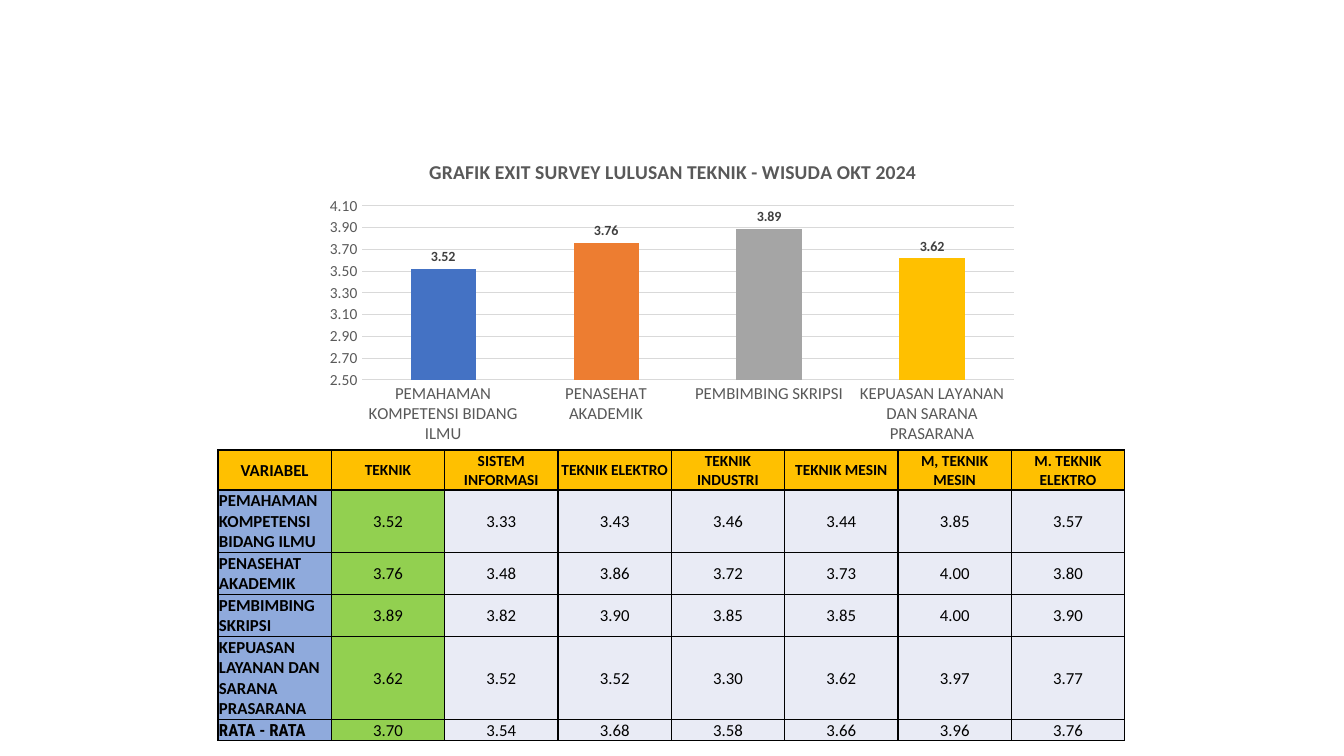
from lxml.etree import SubElement
from pptx import Presentation
from pptx.chart.data import CategoryChartData as ChartData
from pptx.dml.color import RGBColor
from pptx.enum.chart import XL_CHART_TYPE as ChartType
from pptx.enum.chart import XL_LABEL_POSITION as LabelPosition
from pptx.enum.chart import XL_TICK_MARK as TickMark
from pptx.enum.text import MSO_ANCHOR as Anchor
from pptx.enum.text import PP_ALIGN as Align
from pptx.oxml import parse_xml
from pptx.oxml.ns import nsdecls, qn
from pptx.util import Pt

EMU_PER_PX = 914400 / 100.8
BLACK, GRAY, GRID, LABEL = "000000", "595959", "D9D9D9", "404040"
GOLD, GREEN, BLUE, PALE = "FFC000", "92D050", "8FAADC", "E9EBF5"
BAR_COLORS = ["4472C4", "ED7D31", "A5A5A5", GOLD]

TITLE = "GRAFIK EXIT SURVEY LULUSAN TEKNIK - WISUDA OKT 2024"
HEADER = ["VARIABEL", "TEKNIK", "SISTEM INFORMASI", "TEKNIK ELEKTRO",
          "TEKNIK INDUSTRI", "TEKNIK MESIN", "M, TEKNIK MESIN", "M. TEKNIK ELEKTRO"]
SCORES = {
    "PEMAHAMAN KOMPETENSI BIDANG ILMU": [3.52, 3.33, 3.43, 3.46, 3.44, 3.85, 3.57],
    "PENASEHAT AKADEMIK": [3.76, 3.48, 3.86, 3.72, 3.73, 4.00, 3.80],
    "PEMBIMBING SKRIPSI": [3.89, 3.82, 3.90, 3.85, 3.85, 4.00, 3.90],
    "KEPUASAN LAYANAN DAN SARANA PRASARANA": [3.62, 3.52, 3.52, 3.30, 3.62, 3.97, 3.77],
}
AVERAGE = "RATA - RATA"
AVERAGES = [3.70, 3.54, 3.68, 3.58, 3.66, 3.96, 3.76]
ROW_HEIGHTS = [40, 48, 32, 32, 64, 16]


def px(length):
    return round(length * EMU_PER_PX)


def color(value):
    return RGBColor.from_string(value)


def style_font(font, size, fill=BLACK, bold=False, name="Calibri"):
    font.name, font.size, font.bold = name, Pt(size), bold
    font.color.rgb = color(fill)


def write(frame, text, align=Align.CENTER, **style):
    paragraph = frame.paragraphs[0]
    paragraph.alignment = align
    run = paragraph.add_run()
    run.text = text
    style_font(run.font, **style)


class SurveySlide:
    def __init__(self, presentation):
        self.slide = presentation.slides.add_slide(presentation.slide_layouts[6])

    def chart(self, left, top, width, height, title, values, plot):
        data = ChartData(number_format="0.00")
        data.categories = list(values)
        data.add_series("Series 1", list(values.values()))
        frame = self.slide.shapes.add_chart(
            ChartType.COLUMN_CLUSTERED, px(left), px(top), px(width), px(height), data)
        chart = frame.chart
        style_font(chart.font, 10)
        chart.has_legend = False
        chart.has_title = True
        write(chart.chart_title.text_frame, title, size=14, fill=GRAY, bold=True)
        chart.chart_title.include_in_layout = False
        self.axes(chart)
        self.bars(chart.plots[0])
        self.place_plot(chart, plot, (left, top, width, height))

    def axes(self, chart):
        for axis, size in ((chart.category_axis, 12), (chart.value_axis, 11)):
            axis.major_tick_mark = axis.minor_tick_mark = TickMark.NONE
            style_font(axis.tick_labels.font, size, GRAY)
            axis.format.line.fill.background()
        axis = chart.value_axis
        axis.minimum_scale, axis.maximum_scale, axis.major_unit = 2.5, 4.1, 0.2
        axis.tick_labels.number_format = "0.00"
        axis.tick_labels.number_format_is_linked = False
        axis.major_gridlines.format.line.color.rgb = color(GRID)
        axis.major_gridlines.format.line.width = Pt(0.75)

    def bars(self, plot):
        plot.gap_width = 150
        plot.vary_by_categories = False
        series = plot.series[0]
        for index, fill in enumerate(BAR_COLORS):
            point = series.points[index].format
            point.fill.solid()
            point.fill.fore_color.rgb = color(fill)
        labels = series.data_labels
        labels.show_value = True
        labels.number_format = "0.00"
        labels.number_format_is_linked = False
        labels.position = LabelPosition.OUTSIDE_END
        style_font(labels.font, 10, LABEL, bold=True)

    def place_plot(self, chart, plot, area):
        plot_area = chart.plots[0]._element.getparent()
        for old in plot_area.findall(qn("c:layout")):
            plot_area.remove(old)
        layout = parse_xml(f"<c:layout {nsdecls('c')}/>")
        manual = SubElement(layout, qn("c:manualLayout"))
        left, top, width, height = area
        parts = {"layoutTarget": "inner", "xMode": "edge", "yMode": "edge",
                 "x": round((plot[0] - left) / width, 3),
                 "y": round((plot[1] - top) / height, 3),
                 "w": round(plot[2] / width, 3), "h": round(plot[3] / height, 3)}
        for tag, value in parts.items():
            SubElement(manual, qn(f"c:{tag}")).set("val", str(value))
        plot_area.insert(0, layout)

    def cell(self, cell, text, fill, anchor=Anchor.MIDDLE, **style):
        cell.margin_left = cell.margin_right = cell.margin_top = px(1)
        cell.margin_bottom = 0
        cell.vertical_anchor = anchor
        write(cell.text_frame, text, **style)
        properties = cell._tc.get_or_add_tcPr()
        for side in ("lnL", "lnR", "lnT", "lnB"):
            properties.append(parse_xml(
                f'<a:{side} {nsdecls("a")} w="{Pt(1)}"><a:solidFill>'
                f'<a:srgbClr val="{BLACK}"/></a:solidFill></a:{side}>'))
        cell.fill.solid()
        cell.fill.fore_color.rgb = color(fill)

    def table(self, left, top, width, header, rows, heights):
        table = self.slide.shapes.add_table(
            len(rows) + 1, len(header), px(left), px(top), px(width), px(sum(heights))).table
        for row, height in zip(table.rows, heights):
            row.height = px(height)
        for column, text in enumerate(header):
            self.cell(table.cell(0, column), text, GOLD,
                      size=11 if column else 12, bold=True)
        for row, (label, values) in enumerate(rows.items(), 1):
            name = "Roboto Condensed" if label == AVERAGE else "Calibri"
            self.cell(table.cell(row, 0), label, BLUE, Anchor.BOTTOM,
                      align=Align.LEFT, size=12, bold=True, name=name)
            for column, value in enumerate(values, 1):
                self.cell(table.cell(row, column), f"{value:.2f}",
                          GREEN if column == 1 else PALE, size=12)


def main():
    presentation = Presentation()
    presentation.slide_width, presentation.slide_height = px(1344), px(756)
    survey = SurveySlide(presentation)
    faculty = {label: values[0] for label, values in SCORES.items()}
    survey.chart(316, 143, 714, 307, TITLE, faculty, plot=(362, 206, 652, 174))
    survey.table(218, 450, 907, HEADER, {**SCORES, AVERAGE: AVERAGES}, ROW_HEIGHTS)
    presentation.save("out.pptx")


if __name__ == "__main__":
    main()
